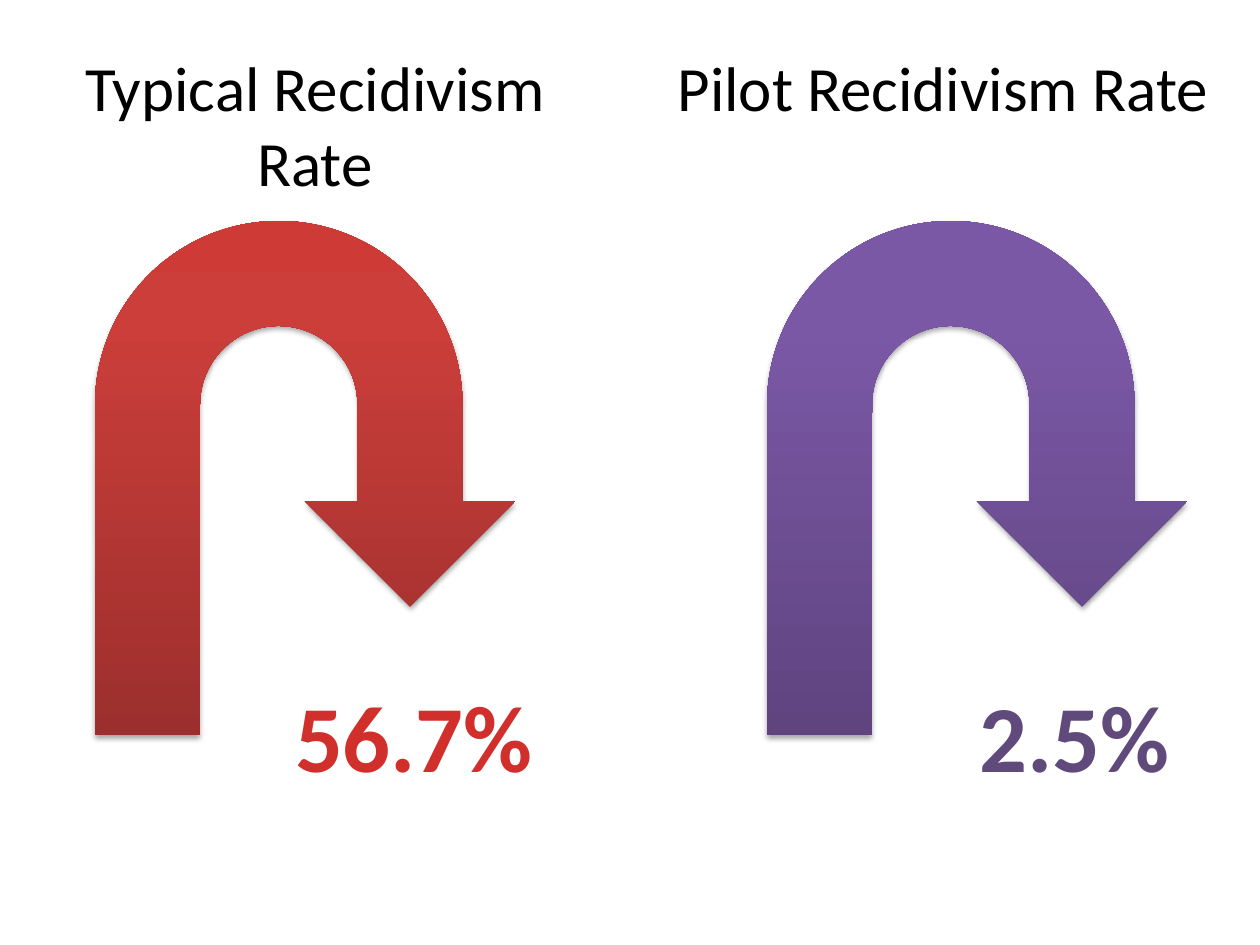
from copy import deepcopy

from lxml import etree
from pptx import Presentation
from pptx import util as u
from pptx.dml.color import RGBColor
from pptx.enum import shapes, text
from pptx.oxml.ns import qn

PX = u.Inches(1) / 126
COLORS = {
    "title": "000000",
    "purple_rate": "604A7B",
    "shadow": "000000",
}
RED_ARROW = {0: "9C2F2D", 0.8: "CB3E3A", 1: "CE3B37"}
PURPLE_ARROW = {0: "5F4480", 0.8: "7B58A6", 1: "7C57A8"}
RED_RATE = {0: "FC7C7A", 0.75: "D02F2C", 1: "C70500"}


def paint_gradient(fill, element, stops, angle):
    fill.gradient()
    fill.gradient_angle = angle
    stop_list = next(element.iter(qn("a:gsLst")))
    stop_list.append(deepcopy(stop_list[-1]))
    for stop, (position, color) in zip(fill.gradient_stops, stops.items()):
        stop.position = position
        stop.color.rgb = RGBColor.from_string(color)


def write(content, left, top, width, height, size, color=None, stops=None, bold=False, wrap=True):
    box = slide.shapes.add_textbox(*[round(n * PX) for n in (left, top, width, height)])
    frame = box.text_frame
    frame.word_wrap = wrap
    frame.auto_size = text.MSO_AUTO_SIZE.SHAPE_TO_FIT_TEXT
    paragraph = frame.paragraphs[0]
    paragraph.alignment = text.PP_ALIGN.CENTER
    run = paragraph.add_run()
    run.text = content
    run.font.name = "Calibri"
    run.font.size = u.Pt(size)
    run.font.bold = bold
    if stops:
        paint_gradient(run.font.fill, box.element, stops, 270)
    else:
        run.font.color.rgb = RGBColor.from_string(color)


presentation = Presentation()
presentation.slide_width = u.Inches(10)
presentation.slide_height = u.Inches(7.5)
slide = presentation.slides.add_slide(presentation.slide_layouts[6])

for left, stops in ((95, RED_ARROW), (767, PURPLE_ARROW)):
    arrow = slide.shapes.add_shape(
        shapes.MSO_SHAPE.U_TURN_ARROW, *[round(n * PX) for n in (left, 221, 420, 514)]
    )
    arrow.line.fill.background()
    paint_gradient(arrow.fill, arrow.element, stops, 90)
    arrow.shadow.inherit = False
    effects = next(arrow.element.iter(qn("a:effectLst")))
    shadow = etree.SubElement(
        effects, qn("a:outerShdw"), blurRad="40000", dist="23000", dir="5400000", rotWithShape="0"
    )
    shadow_color = etree.SubElement(shadow, qn("a:srgbClr"), val=COLORS["shadow"])
    etree.SubElement(shadow_color, qn("a:alpha"), val="35000")

write("Typical Recidivism Rate", 21, 42, 588, 165, size=36, color=COLORS["title"])
write("Pilot Recidivism Rate", 649, 42, 588, 89, size=36, color=COLORS["title"])
write("56.7%", 281, 672, 266, 127, size=54, stops=RED_RATE, bold=True, wrap=False)
write("2.5%", 966, 672, 217, 127, size=54, color=COLORS["purple_rate"], bold=True, wrap=False)

presentation.save("out.pptx")
